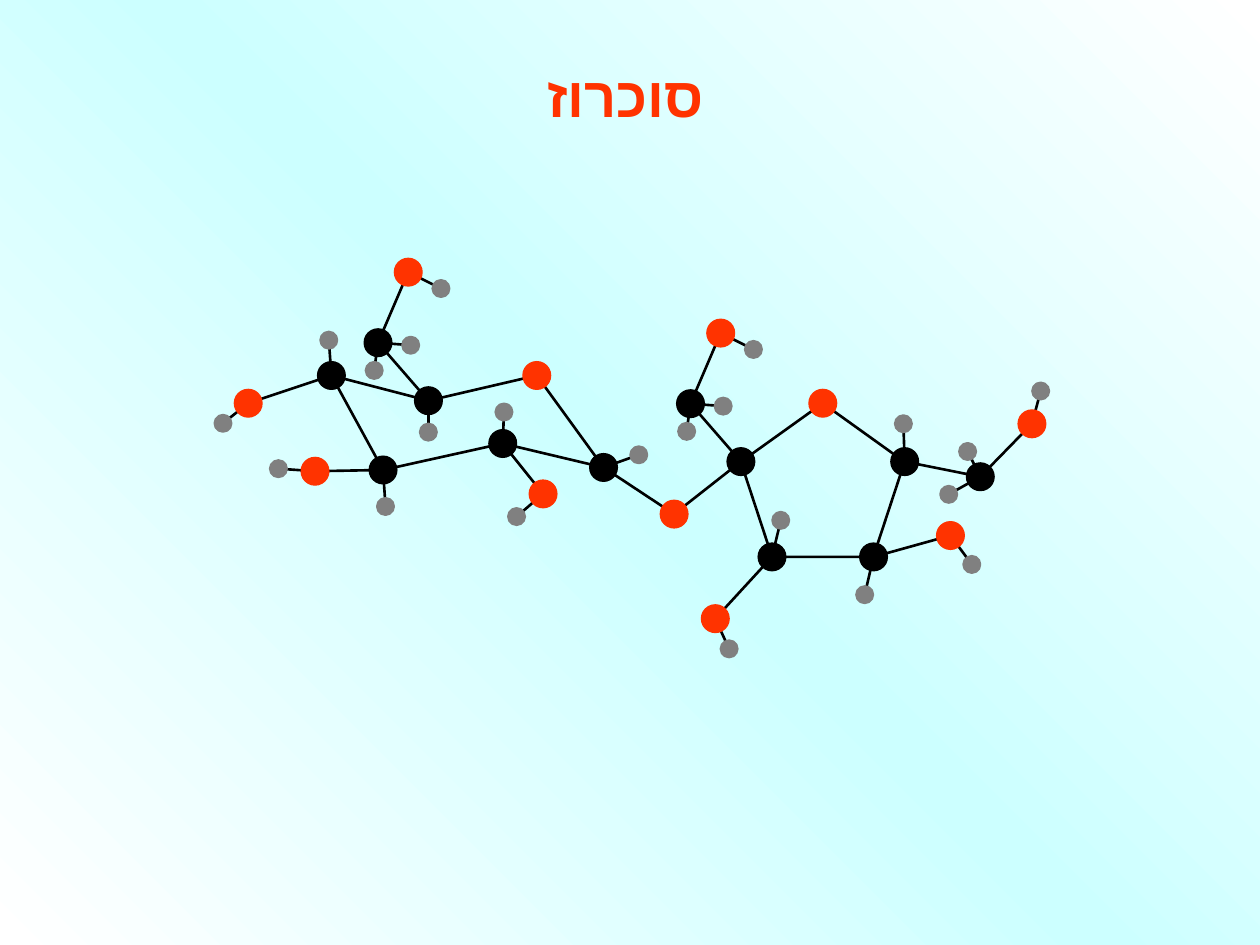
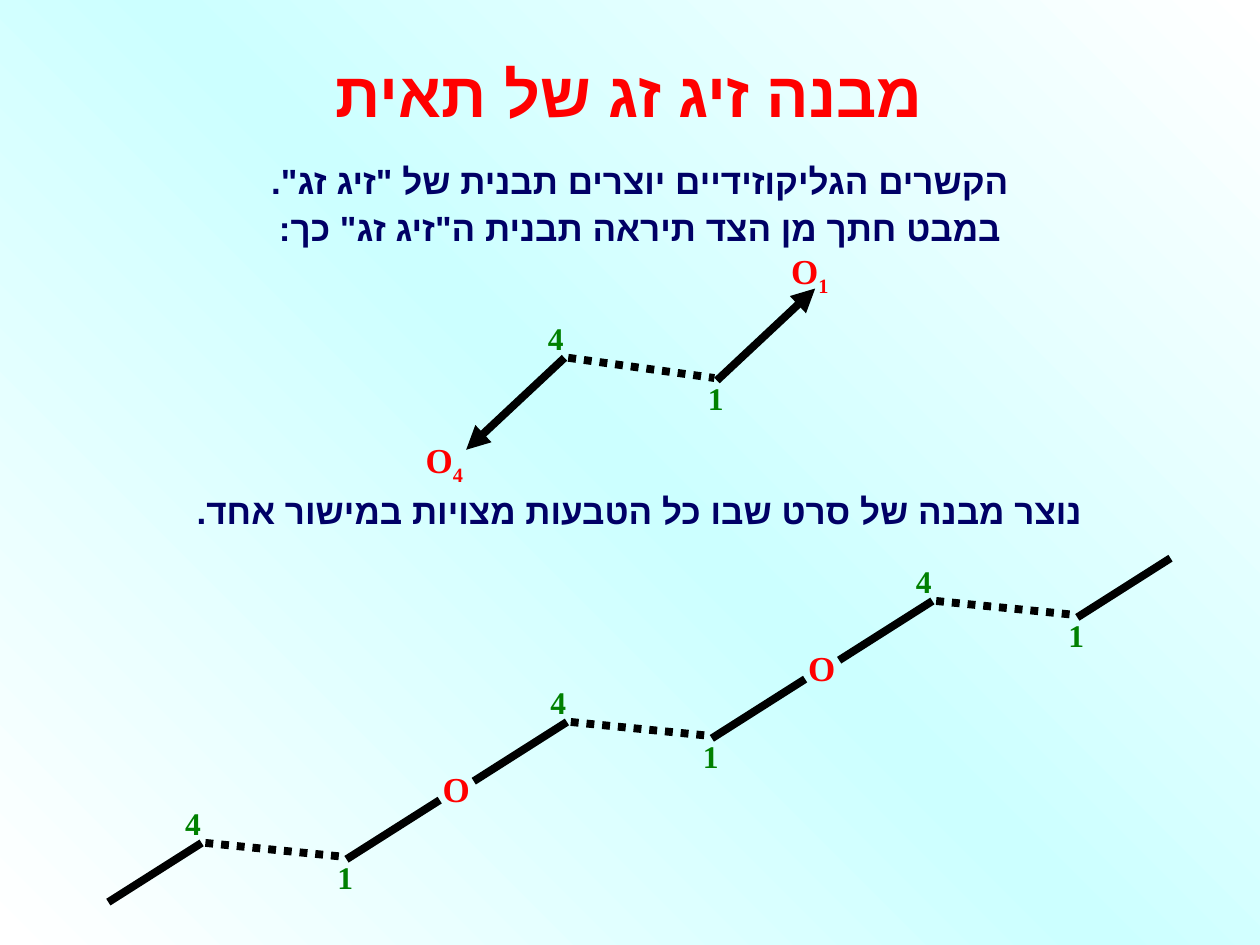
from dataclasses import dataclass, field
from itertools import pairwise

from pptx import Presentation
from pptx.dml.color import RGBColor
from pptx.enum.dml import MSO_LINE
from pptx.enum.shapes import MSO_CONNECTOR as CONN, MSO_SHAPE as SHAPE
from pptx.enum.text import MSO_ANCHOR as ANCHOR, PP_ALIGN as ALIGN
from pptx.oxml import parse_xml
from pptx.oxml.ns import nsdecls, qn
from pptx.util import Cm, Pt


@dataclass(frozen=True)
class Theme:
    """Colours, fonts and sizes shared by the slides."""
    edge: str = "FFFFFF"
    band: str = "CCFFFF"
    black: str = "000000"
    orange: str = "FF3300"
    grey: str = "808080"
    red: str = "FF0000"
    navy: str = "000066"
    green: str = "008000"
    sans: str = "Arial"
    serif: str = "Times New Roman"
    molecule_title: int = 32
    title: int = 36
    body: int = 20
    number: int = 18
    bond: float = 1.5
    chain: float = 4.5


T = Theme()
CM_PER_UNIT = 2.54
ATOM_STYLES = {"C": (0.22, T.black, 0.75), "O": (0.22, T.orange, 0.75), "H": (0.13, T.grey, T.bond)}


def lengths(*units):
    """Turn layout units into slide lengths."""
    return [Cm(u * CM_PER_UNIT) for u in units]


def shifted(point, offset, sign=1):
    """Move a point by an offset, or back by it when sign is -1."""
    return point[0] + sign * offset[0], point[1] + sign * offset[1]


@dataclass
class Molecule:
    """Atoms as (element, centre) and bonds as pairs of centres."""
    atoms: list = field(default_factory=list)
    bonds: list = field(default_factory=list)

    def place(self, element, centre):
        """Put an atom at a centre and return that centre."""
        self.atoms.append((element, centre))
        return centre

    def attach(self, parent, element, offset):
        """Bond a new atom to its parent and return its centre."""
        centre = self.place(element, shifted(parent, offset))
        self.bonds.append((parent, centre))
        return centre

    def hydroxyl(self, parent, to_oxygen, to_hydrogen):
        """Attach an OH group."""
        oxygen = self.attach(parent, "O", to_oxygen)
        self.attach(oxygen, "H", to_hydrogen)

    def hydroxymethyl(self, parent, to_carbon=(-0.4, -0.46), to_oxygen=(0.24, -0.56),
                      oh_bond=(0.26, 0.13), ch_bonds=((0.26, 0.02), (-0.03, 0.22))):
        """Attach a CH2OH group, upright unless told otherwise."""
        carbon = self.attach(parent, "C", to_carbon)
        for offset in ch_bonds:
            self.attach(carbon, "H", offset)
        self.hydroxyl(carbon, to_oxygen, oh_bond)

    def draw(self, s):
        """Draw the bonds and then the atoms that cover their ends."""
        for start, end in self.bonds:
            add_line(s, start, end)
        for element, (x, y) in self.atoms:
            size, colour, width = ATOM_STYLES[element]
            box = (x - size / 2, y - size / 2, size, size)
            add_outline(s, SHAPE.OVAL, box, colour, width, colour)


def add_slide(prs):
    """Add a blank slide with the diagonal gradient background."""
    s = prs.slides.add_slide(prs.slide_layouts[6])
    stops = "".join(
        f'<a:gs pos="{pos}"><a:srgbClr val="{colour}"/></a:gs>'
        for pos, colour in ((0, T.edge), (50000, T.band), (100000, T.edge)))
    s.element.cSld.insert(0, parse_xml(
        f'<p:bg {nsdecls("p", "a")}><p:bgPr><a:gradFill rotWithShape="0"><a:gsLst>{stops}</a:gsLst>'
        '<a:lin ang="18900000" scaled="1"/></a:gradFill><a:effectLst/></p:bgPr></p:bg>'))
    return s


def add_run(p, text, size, colour, font, base=None):
    """Add one bold run, optionally as a subscript."""
    r = p.add_run()
    r.text = text
    f = r.font
    f.size, f.bold, f.name = Pt(size), True, font
    f.color.rgb = RGBColor.from_string(colour)
    r_pr = f._element
    r_pr.append(parse_xml(f'<a:cs {nsdecls("a")} typeface="{font}"/>'))
    if base:
        r_pr.set("baseline", str(base))


def add_text(s, box, *lines, size=T.body, colour=T.navy, font=T.sans, rtl=True,
             sub="", spacing=None, before=0, wrap=True, anchor=ANCHOR.TOP):
    """Add a text box with one paragraph per line."""
    tf = s.shapes.add_textbox(*lengths(*box)).text_frame
    tf.word_wrap, tf.vertical_anchor = wrap, anchor
    for i, line in enumerate(lines):
        p = tf.add_paragraph() if i else tf.paragraphs[0]
        p.alignment = ALIGN.CENTER if rtl else ALIGN.LEFT
        p.line_spacing, p.space_before = spacing, Pt(before)
        if rtl:
            p._p.get_or_add_pPr().set("rtl", "1")
        add_run(p, line, size, colour, font)
        if sub:
            add_run(p, sub, size, colour, font, base=-25000)


def add_line(s, start, end, width=T.bond, dotted=False, arrow=False):
    """Add a straight black line, optionally dotted or with an arrowhead."""
    c = s.shapes.add_connector(CONN.STRAIGHT, *lengths(*start, *end))
    c.line.width = Pt(width)
    c.line.color.rgb = RGBColor.from_string(T.black)
    if dotted:
        c.line.dash_style = MSO_LINE.ROUND_DOT
    if arrow:
        c.line._get_or_add_ln().append(parse_xml(f'<a:tailEnd {nsdecls("a")} type="triangle"/>'))
    sp_pr = c._element.find(qn("p:spPr"))
    sp_pr.append(parse_xml(f'<a:effectLst {nsdecls("a")}/>'))


def add_outline(s, kind, box, line, width, fill=None):
    """Add a preset shape with a coloured outline and an optional fill."""
    sp = s.shapes.add_shape(kind, *lengths(*box))
    sp.shadow.inherit = False
    if fill:
        sp.fill.solid()
        sp.fill.fore_color.rgb = RGBColor.from_string(fill)
    else:
        sp.fill.background()
    sp.line.color.rgb = RGBColor.from_string(line)
    sp.line.width = Pt(width)


def add_label(s, point, text, colour=T.red, size=T.body, sub=""):
    """Add an atom letter or a carbon number."""
    add_text(s, (*point, 0.69, 0.51), text, size=size, colour=colour, font=T.serif, rtl=False, sub=sub)


def add_side_view(s, carbon4, across=(1.1, 0.11), arm=(0.74, -0.47), arrow=False):
    """Add a ring seen from the side and return the outer ends of its two arms."""
    carbon1 = shifted(carbon4, across)
    add_line(s, carbon4, carbon1, T.chain, dotted=True)
    arm4_start = shifted(carbon4, (-0.03, 0))
    arm1_start = shifted(carbon1, (0.02, 0.02))
    arm4_end = shifted(arm4_start, arm, sign=-1)
    arm1_end = shifted(arm1_start, arm)
    for start, end in ((arm4_start, arm4_end), (arm1_start, arm1_end)):
        add_line(s, start, end, T.chain, arrow=arrow)
    add_label(s, shifted(carbon4, (-0.26, -0.36)), "4", T.green, T.number)
    add_label(s, shifted(carbon1, (-0.15, -0.04)), "1", T.green, T.number)
    return arm4_end, arm1_end


def add_glucose(m):
    """Add the six-membered ring with its groups and return carbon 1."""
    ring = [("C", (4.79, 3.71)), ("C", (3.99, 3.52)), ("C", (3.04, 3.73)),
            ("C", (2.63, 2.98)), ("C", (3.4, 3.18)), ("O", (4.26, 2.98))]
    c1, c2, c3, c4, c5, o5 = centres = [m.place(*atom) for atom in ring]
    m.bonds += pairwise(centres + [c1])
    for carbon, offset in ((c1, (0.28, -0.1)), (c2, (0.01, -0.25)), (c3, (0.02, 0.29)),
                           (c4, (-0.02, -0.28)), (c5, (0, 0.25))):
        m.attach(carbon, "H", offset)
    m.hydroxyl(c2, (0.32, 0.4), (-0.21, 0.18))
    m.hydroxyl(c3, (-0.54, 0.01), (-0.29, -0.02))
    m.hydroxyl(c4, (-0.66, 0.22), (-0.2, 0.16))
    m.hydroxymethyl(c5)
    return c1


def add_fructose(m, pentagon):
    """Add atoms and groups on the corners of the pentagon and return carbon 2."""
    left, top, width, height = pentagon
    corners = [("C", 0, 0.38), ("C", 0.19, 1), ("C", 0.81, 1), ("C", 1, 0.38), ("O", 0.5, 0)]
    c2, c3, c4, c5, _ = [m.place(element, (left + fx * width, top + fy * height))
                         for element, fx, fy in corners]
    for carbon, offset in ((c3, (0.07, -0.29)), (c4, (-0.07, 0.3)), (c5, (-0.01, -0.3))):
        m.attach(carbon, "H", offset)
    m.hydroxyl(c3, (-0.45, 0.49), (0.11, 0.24))
    m.hydroxyl(c4, (0.61, -0.17), (0.17, 0.23))
    m.hydroxymethyl(c2)
    m.hydroxymethyl(c5, to_carbon=(0.6, 0.12), to_oxygen=(0.41, -0.42), oh_bond=(0.07, -0.26),
                    ch_bonds=((-0.1, -0.2), (-0.25, 0.14)))
    return c2


def build_sucrose(prs):
    """Build sucrose: glucose and fructose joined by a bridging oxygen."""
    s = add_slide(prs)
    add_text(s, (3.82, 0.44, 2.29, 0.63), "סוכרוז", size=T.molecule_title,
             colour=T.orange, anchor=ANCHOR.MIDDLE)
    pentagon = (5.88, 3.2, 1.3, 1.22)
    add_outline(s, SHAPE.REGULAR_PENTAGON, pentagon, T.black, T.bond)
    sucrose = Molecule()
    glucose_c1 = add_glucose(sucrose)
    fructose_c2 = add_fructose(sucrose, pentagon)
    bridge = sucrose.attach(glucose_c1, "O", (0.56, 0.37))
    sucrose.bonds.append((bridge, fructose_c2))
    sucrose.draw(s)


def build_zigzag(prs):
    """Build the zigzag structure of cellulose: one ring, then a chain of rings."""
    s = add_slide(prs)
    add_text(s, (1.72, 0.38, 6.55, 0.43), "מבנה זיג זג של תאית",
             size=T.title, colour=T.red, wrap=False)
    add_text(s, (1.06, 1.31, 8.04, 0.73),
             'הקשרים הגליקוזידיים יוצרים תבנית של "זיג זג".',
             'במבט חתך מן הצד תיראה תבנית ה"זיג זג" כך:', spacing=0.7, before=10)
    add_text(s, (0.54, 3.93, 9.07, 0.33),
             "נוצר מבנה של סרט שבו כל הטבעות מצויות במישור אחד.", spacing=0.7, before=10)

    arrow4, arrow1 = add_side_view(s, (4.51, 2.84), across=(1.16, 0.16), arm=(0.78, -0.73), arrow=True)
    add_label(s, shifted(arrow1, (-0.29, -0.36)), "O", sub="1")
    add_label(s, shifted(arrow4, (-0.42, -0.14)), "O", sub="4")

    first, step = (1.63, 6.69), (2.9, -0.96)
    rings = [add_side_view(s, shifted(first, step, sign=i)) for i in range(3)]
    for (_, (x1, y1)), ((x2, y2), _) in pairwise(rings):
        middle = ((x1 + x2) / 2, (y1 + y2) / 2)
        add_label(s, shifted(middle, (-0.21, -0.23)), "O")


def main():
    """Build both slides and save the presentation."""
    prs = Presentation()
    prs.slide_width, prs.slide_height = Cm(25.4), Cm(19.05)
    build_sucrose(prs)
    build_zigzag(prs)
    prs.save("out.pptx")


if __name__ == "__main__":
    main()
